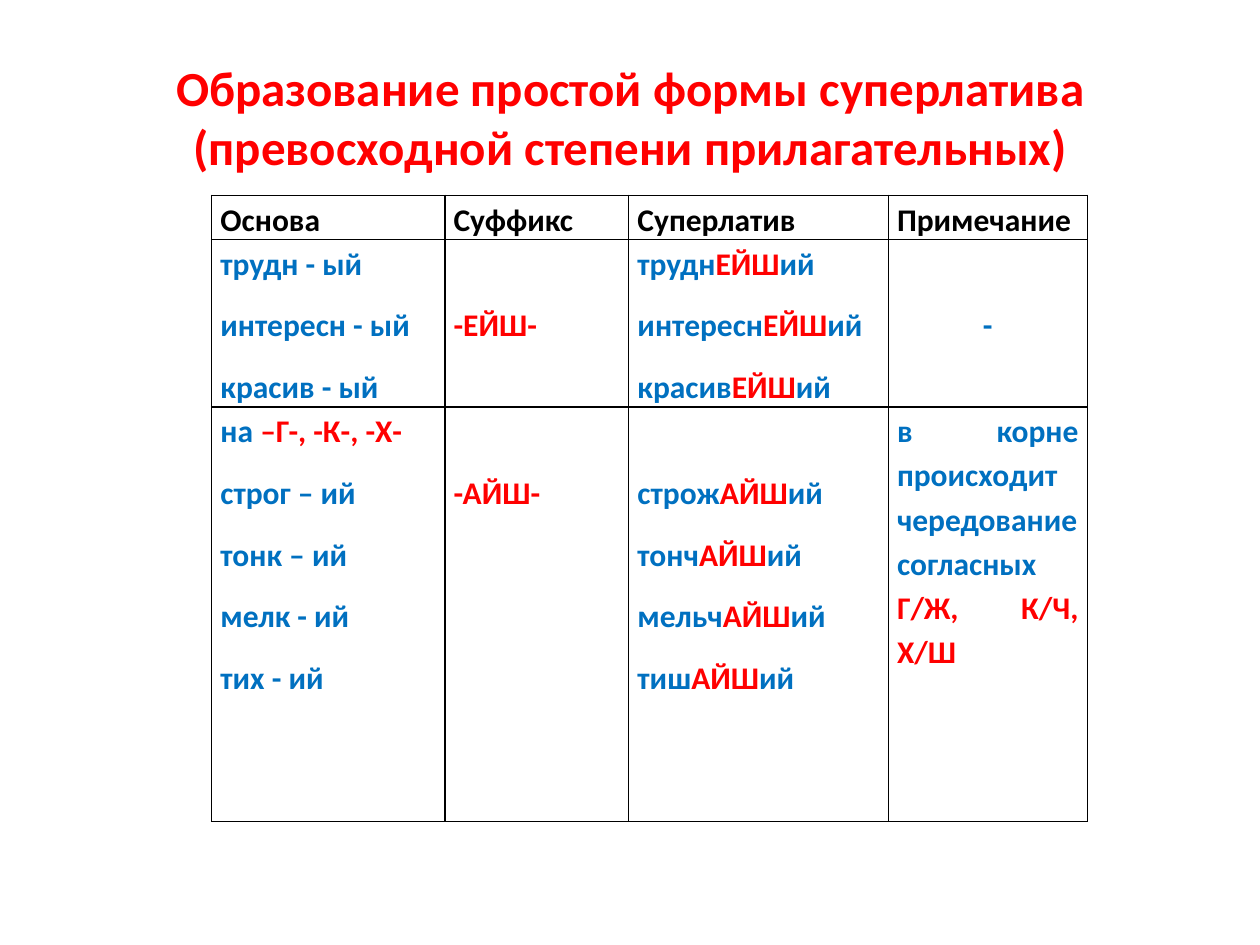
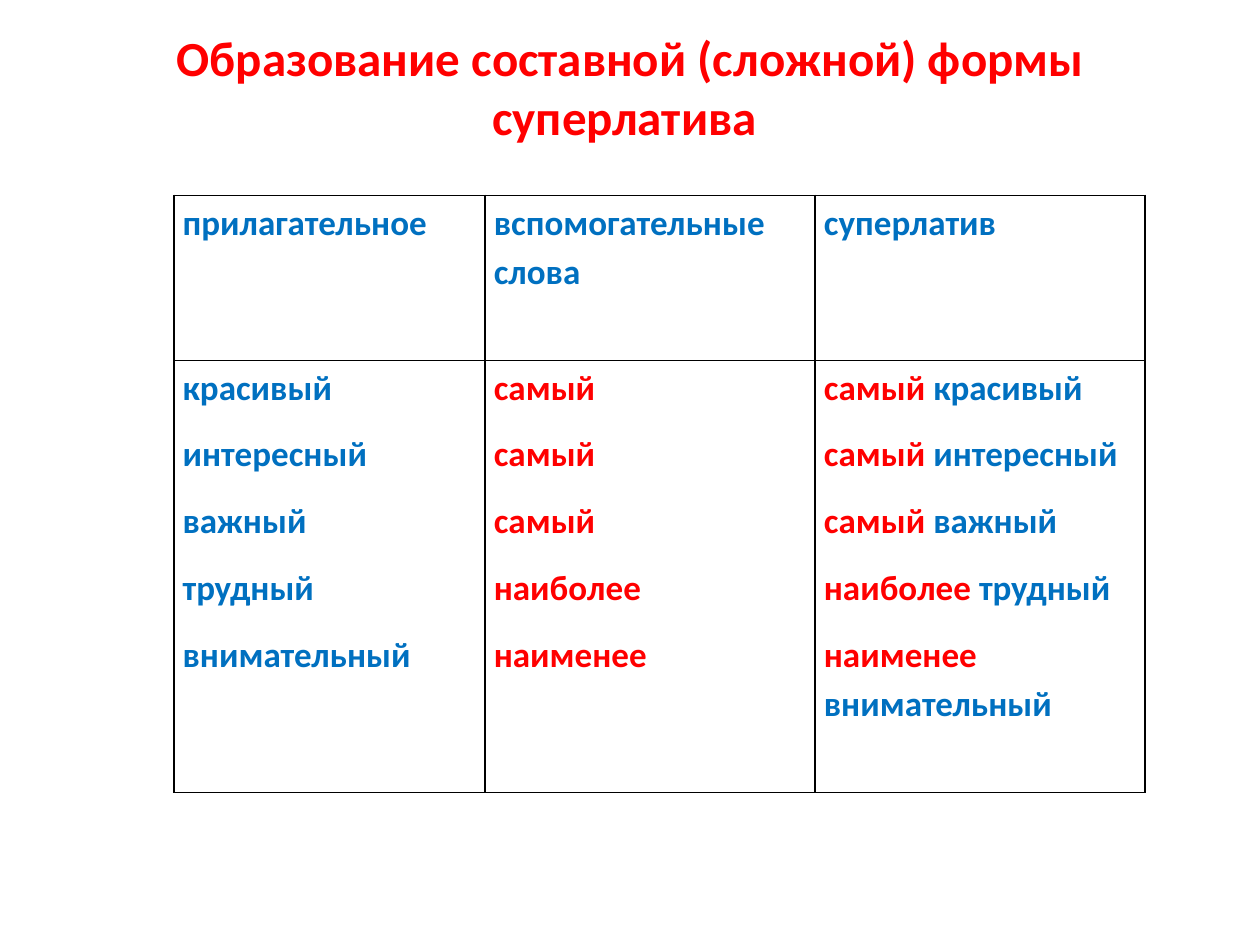
"""Build two slides on the simple and compound superlative of Russian adjectives."""
from lxml import etree
from pptx import Presentation
from pptx import util as u
from pptx.dml.color import RGBColor
from pptx.enum import text
from pptx.oxml import ns

FONT = "Calibri"
RED, BLUE, BLACK = "FF0000", "0070C0", "000000"
LINE_STEP = 0.49


def style(span, size, color):
    span.font.name = FONT
    span.font.size = u.Pt(size)
    span.font.bold = True
    span.font.color.rgb = RGBColor.from_string(color)


def add_borders(cell):
    properties = cell._tc.get_or_add_tcPr()
    for side in ("lnL", "lnR", "lnT", "lnB"):
        line = etree.SubElement(properties, ns.qn("a:" + side), w=str(u.Pt(1)))
        fill = etree.SubElement(line, ns.qn("a:solidFill"))
        etree.SubElement(fill, ns.qn("a:srgbClr"), val=BLACK)


# Text between asterisks is red; "skipped" gives the lines left free above a cell's text.
slides = [
    {
        "title": "Образование простой формы суперлатива (превосходной степени прилагательных)",
        "title_at": (0.3, 1.25),
        "table_at": (1.68, 1.55),
        "columns": [1.85, 1.46, 2.06, 1.58],
        "heights": [0.35, 1.33, 3.29],
        "size": 18,
        "header_color": BLACK,
        "skipped": {(1, 1): 1, (1, 3): 1, (2, 1): 1, (2, 2): 1},
        "centred": [(1, 3)],
        "rows": [
            [["Основа"], ["Суффикс"], ["Суперлатив"], ["Примечание"]],
            [
                ["трудн - ый", "интересн - ый", "красив - ый"],
                ["*-ЕЙШ-*"],
                ["трудн*ЕЙШ*ий", "интересн*ЕЙШ*ий", "красив*ЕЙШ*ий"],
                ["-"],
            ],
            [
                ["на *–Г-, -К-, -Х-*", "строг – ий", "тонк – ий", "мелк - ий", "тих - ий"],
                ["*-АЙШ-*"],
                ["строж*АЙШ*ий", "тонч*АЙШ*ий", "мельч*АЙШ*ий", "тиш*АЙШ*ий"],
                ["в корне происходит чередование согласных *Г/Ж, К/Ч, Х/Ш*"],
            ],
        ],
    },
    {
        "title": "Образование составной (сложной) формы суперлатива ",
        "title_at": (0.06, 1.25),
        "table_at": (1.38, 1.55),
        "columns": [2.47, 2.62, 2.62],
        "heights": [1.31, 3.43],
        "size": 20,
        "header_color": BLUE,
        "skipped": {},
        "centred": [],
        "rows": [
            [["прилагательное"], ["вспомогательные слова"], ["суперлатив"]],
            [
                ["красивый", "интересный", "важный", "трудный", "внимательный"],
                ["*самый*", "*самый*", "*самый*", "*наиболее*", "*наименее*"],
                ["*самый* красивый", "*самый* интересный", "*самый* важный",
                 "*наиболее* трудный", "*наименее* внимательный"],
            ],
        ],
    },
]

deck = Presentation()
deck.slide_width, deck.slide_height = u.Inches(10), u.Inches(7.5)

for content in slides:
    page = deck.slides.add_slide(deck.slide_layouts[6])

    top, height = content["title_at"]
    box = page.shapes.add_textbox(u.Inches(0.5), u.Inches(top), u.Inches(9), u.Inches(height))
    box.text_frame.word_wrap = True
    box.text_frame.vertical_anchor = text.MSO_ANCHOR.MIDDLE
    box.text_frame.text = content["title"]
    para = box.text_frame.paragraphs[0]
    para.alignment = text.PP_ALIGN.CENTER
    style(para.runs[0], 28, RED)

    left, top = content["table_at"]
    columns, heights = content["columns"], content["heights"]
    table = page.shapes.add_table(
        len(heights), len(columns), u.Inches(left), u.Inches(top),
        u.Inches(sum(columns)), u.Inches(sum(heights))).table
    table.first_row = table.horz_banding = False
    for column, width in zip(table.columns, columns):
        column.width = u.Inches(width)
    for row, height in zip(table.rows, heights):
        row.height = u.Inches(height)

    for r, row_content in enumerate(content["rows"]):
        base_color = BLUE if r else content["header_color"]
        for c, lines in enumerate(row_content):
            cell = table.cell(r, c)
            add_borders(cell)
            cell.fill.background()
            cell.margin_left = cell.margin_right = u.Inches(0.07)
            cell.margin_top = u.Inches(LINE_STEP * content["skipped"].get((r, c), 0))
            cell.margin_bottom = 0
            cell.text_frame.text = "\n".join(line.replace("*", "") for line in lines)
            for para, line in zip(cell.text_frame.paragraphs, lines):
                centred = (r, c) in content["centred"]
                para.alignment = text.PP_ALIGN.CENTER if centred else text.PP_ALIGN.JUSTIFY
                para.line_spacing = 1.15
                para.space_after = u.Pt(10)
                para.clear()
                for i, part in enumerate(line.split("*")):
                    if part:
                        span = para.add_run()
                        span.text = part
                        style(span, content["size"], RED if i % 2 else base_color)

deck.save("out.pptx")
